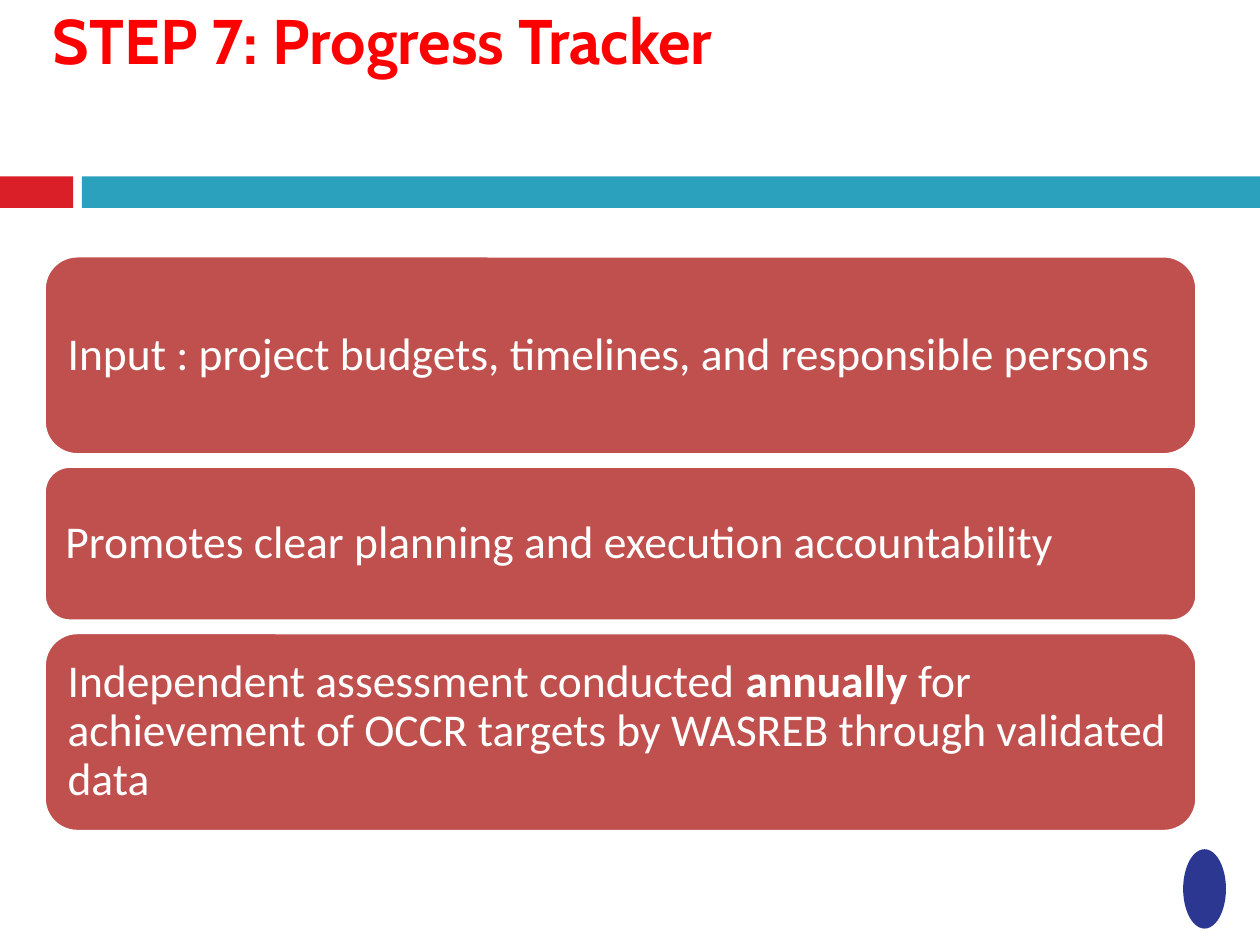
"""Build the Progress Tracker slide."""
from pptx import Presentation
from pptx.dml.color import RGBColor
from pptx.enum.shapes import MSO_SHAPE
from pptx.enum.text import MSO_ANCHOR, PP_ALIGN
from pptx.util import Inches, Pt

RECTANGLE = MSO_SHAPE.RECTANGLE
ROUNDED = MSO_SHAPE.ROUNDED_RECTANGLE
OVAL = MSO_SHAPE.OVAL
TOP, MIDDLE, LEFT = MSO_ANCHOR.TOP, MSO_ANCHOR.MIDDLE, PP_ALIGN.LEFT

RED = RGBColor(0xFF, 0x00, 0x00)
CRIMSON = RGBColor(0xDA, 0x1F, 0x28)
TEAL = RGBColor(0x2C, 0xA1, 0xBE)
NAVY = RGBColor(0x2C, 0x37, 0x91)
BRICK = RGBColor(0xC0, 0x50, 0x4D)
WHITE = RGBColor(0xFF, 0xFF, 0xFF)

WIDTH, HEIGHT = 10, 7.5
TITLE = "STEP 7: Progress Tracker"
CARDS = [
    (1.58, [("Input : project budgets, timelines, and responsible persons", False)]),
    (1.23, [("Promotes clear planning and execution accountability", False)]),
    (1.58, [
        ("Independent assessment conducted ", False),
        ("annually ", True),
        ("for achievement of OCCR targets by WASREB through validated data", False),
    ]),
]
CARD_LEFT, CARD_TOP, CARD_WIDTH, CARD_GAP = 0.35, 2.03, 9.15, 0.09
BAND_TOP, BAND_HEIGHT, BAND_SPLIT, BAND_GAP = 1.4, 0.25, 0.58, 0.07


def set_margins(text_frame, margin):
    text_frame.margin_left = text_frame.margin_right = Inches(margin)
    text_frame.margin_top = text_frame.margin_bottom = Inches(margin)


def format_run(run, font_name, size, color, bold):
    run.font.name = font_name
    run.font.size = Pt(size)
    run.font.color.rgb = color
    run.font.bold = bold


def add_block(slide, kind, left, top, width, height, color):
    shape = slide.shapes.add_shape(
        kind, Inches(left), Inches(top), Inches(width), Inches(height))
    shape.shadow.inherit = False
    shape.fill.solid()
    shape.fill.fore_color.rgb = color
    shape.line.fill.background()
    return shape


def add_title(slide):
    title = slide.shapes.title
    title.left, title.top = Inches(0.42), Inches(0.01)
    title.width, title.height = Inches(9.15), Inches(1.23)
    text_frame = title.text_frame
    text_frame.text = TITLE
    text_frame.vertical_anchor = TOP
    set_margins(text_frame, 0)
    paragraph = text_frame.paragraphs[0]
    paragraph.alignment = LEFT
    format_run(paragraph.runs[0], "Cabin", 36, RED, True)


def add_card(slide, top, height, parts):
    card = add_block(slide, ROUNDED, CARD_LEFT, top, CARD_WIDTH, height, BRICK)
    card.line.color.rgb = WHITE
    card.line.width = Pt(2)
    text_frame = card.text_frame
    text_frame.word_wrap = True
    text_frame.vertical_anchor = MIDDLE
    set_margins(text_frame, 0.11)
    paragraph = text_frame.paragraphs[0]
    paragraph.alignment = LEFT
    paragraph.line_spacing = 0.9
    for text, bold in parts:
        run = paragraph.add_run()
        run.text = text
        format_run(run, "Calibri", 26, WHITE, bold)


def main():
    presentation = Presentation()
    presentation.slide_width, presentation.slide_height = Inches(WIDTH), Inches(HEIGHT)
    slide = presentation.slides.add_slide(presentation.slide_layouts[5])
    band_left = BAND_SPLIT + BAND_GAP
    add_block(slide, RECTANGLE, 0, BAND_TOP, BAND_SPLIT, BAND_HEIGHT, CRIMSON)
    add_block(slide, RECTANGLE, band_left, BAND_TOP, WIDTH - band_left, BAND_HEIGHT, TEAL)
    add_block(slide, OVAL, 9.39, 6.74, 0.34, 0.63, NAVY)
    add_title(slide)
    top = CARD_TOP
    for height, parts in CARDS:
        add_card(slide, top, height, parts)
        top += height + CARD_GAP
    presentation.save("out.pptx")


if __name__ == "__main__":
    main()
